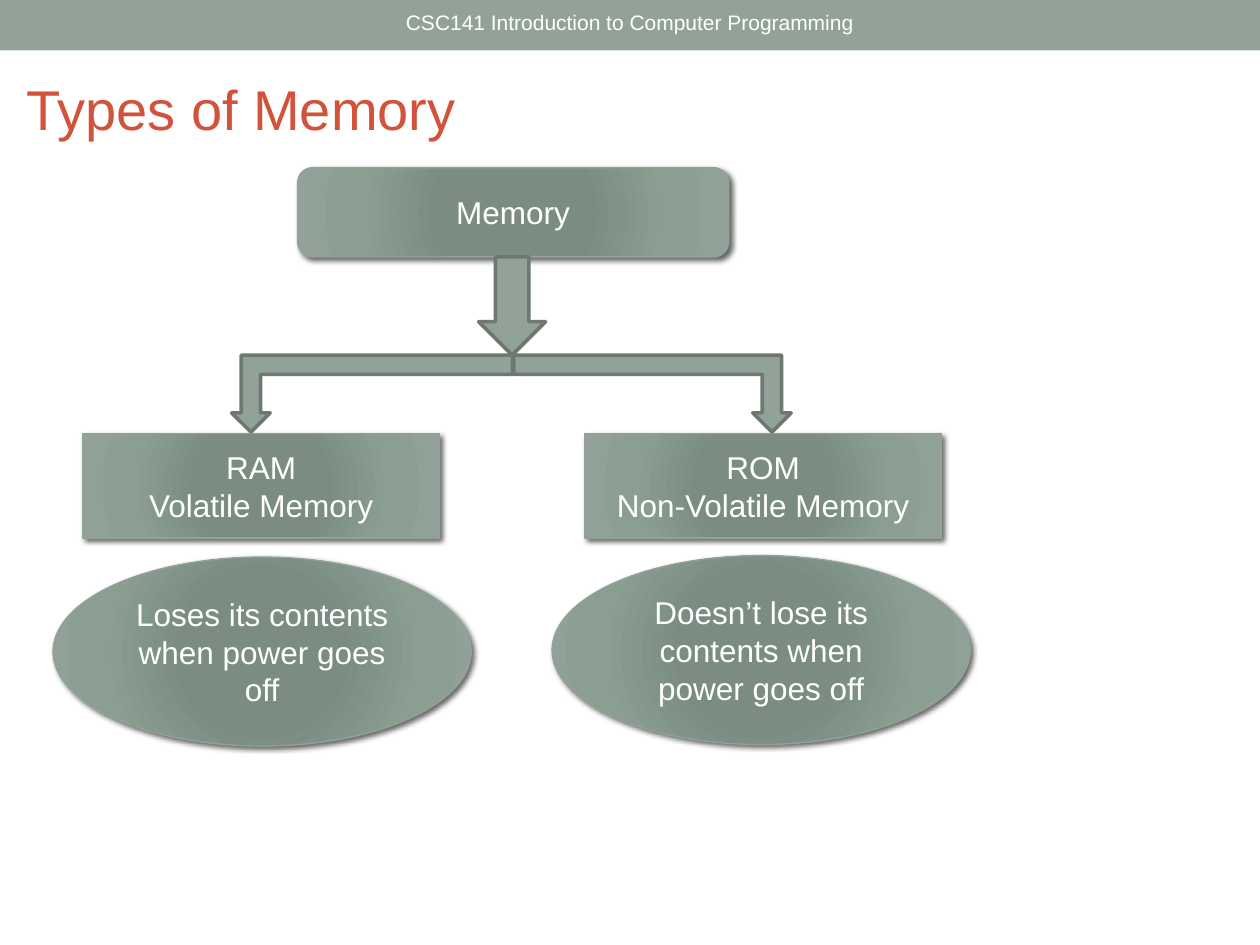
from lxml import etree
from pptx import Presentation
from pptx.dml.color import RGBColor
from pptx.enum.shapes import MSO_SHAPE
from pptx.enum.text import MSO_ANCHOR, PP_ALIGN
from pptx.oxml import parse_xml
from pptx.oxml.ns import nsdecls, qn
from pptx.util import Cm, Pt

RECT, ROUNDED, OVAL = MSO_SHAPE.RECTANGLE, MSO_SHAPE.ROUNDED_RECTANGLE, MSO_SHAPE.OVAL
DOWN, BENT = MSO_SHAPE.DOWN_ARROW, MSO_SHAPE.BENT_UP_ARROW
LEFT, CENTER = PP_ALIGN.LEFT, PP_ALIGN.CENTER
TOP, MIDDLE = MSO_ANCHOR.TOP, MSO_ANCHOR.MIDDLE

THEME = {
    "font": "Arial",
    "sage": "93A299", "outline": "6D7871", "title": "D2533C", "light": "FFFFFF",
    "glow": [(0, "7B8E82"), (34, "7B8D83"), (70, "8A9E92"), (100, "93A299")],
    "header_size": 12, "title_size": 32, "node_size": 18,
    "node_line": 0.75, "arrow_line": 2.08,
}

# Positions are left, top, width, height in centimetres.
HEADER = ("CSC141 Introduction to Computer Programming", (6.98, 0, 11.44, 0.91))
TITLE = ("Types of Memory", (0.28, 1.37, 9.63, 1.63))
NODES = [
    (RECT, (1.67, 8.74, 7.19, 2.11), ["RAM", "Volatile Memory"]),
    (RECT, (11.79, 8.74, 7.19, 2.11), ["ROM", "Non-Volatile Memory"]),
    (OVAL, (1.07, 11.23, 8.43, 3.81), ["Loses its contents when power goes off"]),
    (OVAL, (11.13, 11.2, 8.43, 3.81), ["Doesn’t lose its contents when power goes off"]),
    (ROUNDED, (6, 3.38, 8.69, 1.8), ["Memory"]),
]
# Each arrow: preset, position, rotation, mirrored
ARROWS = [
    (BENT, (4.67, 7.16, 5.66, 1.55), 180, False),
    (BENT, (10.36, 7.16, 5.59, 1.55), 180, True),
    (DOWN, (9.65, 5.18, 1.35, 1.98), 0, False),
]


def rgb(name):
    return RGBColor.from_string(THEME[name])


def write(frame, lines, size, color, align=CENTER, anchor=MIDDLE):
    frame.word_wrap = True
    frame.vertical_anchor = anchor
    for index, line in enumerate(lines):
        paragraph = frame.paragraphs[0] if index == 0 else frame.add_paragraph()
        paragraph.alignment = align
        run = paragraph.add_run()
        run.text = line
        run.font.name = THEME["font"]
        run.font.size = Pt(THEME[size])
        run.font.color.rgb = rgb(color)


def add_label(slide, label, *style):
    text, position = label
    box = slide.shapes.add_textbox(*map(Cm, position))
    write(box.text_frame, [text], *style)


def add_flat(slide, preset, position):
    shape = slide.shapes.add_shape(preset, *map(Cm, position))
    shape.shadow.inherit = False
    shape.fill.solid()
    shape.fill.fore_color.rgb = rgb("sage")
    shape.line.fill.background()
    return shape


def outline(shape, color, width):
    shape.line.color.rgb = rgb(color)
    shape.line.width = Pt(THEME[width])


def add_glow_and_shadow(shape):
    """Swap the solid fill for a radial gradient and add a soft drop shadow."""
    stops = "".join(
        f'<a:gs pos="{percent * 1000}"><a:srgbClr val="{color}"/></a:gs>'
        for percent, color in THEME["glow"])
    gradient = parse_xml(
        f'<a:gradFill {nsdecls("a")} rotWithShape="1"><a:gsLst>{stops}</a:gsLst>'
        '<a:path path="circle"><a:fillToRect l="100000" t="100000" r="100000" b="100000"/>'
        '</a:path></a:gradFill>')
    properties = shape.element.spPr
    properties.replace(properties.find(qn("a:solidFill")), gradient)
    shadow = etree.SubElement(
        properties.find(qn("a:effectLst")), qn("a:outerShdw"),
        blurRad=str(Pt(3)), dist=str(Pt(2)), dir="2700000", rotWithShape="0")
    color = etree.SubElement(shadow, qn("a:srgbClr"), val="000000")
    etree.SubElement(color, qn("a:alpha"), val="60000")


def main():
    deck = Presentation()
    deck.slide_width, deck.slide_height = Cm(25.4), Cm(19.05)
    slide = deck.slides.add_slide(deck.slide_layouts[6])

    add_flat(slide, RECT, (0, 0, 25.4, 1.02))
    add_label(slide, HEADER, "header_size", "light")

    for preset, position, lines in NODES:
        node = add_flat(slide, preset, position)
        outline(node, "sage", "node_line")
        add_glow_and_shadow(node)
        write(node.text_frame, lines, "node_size", "light")

    for preset, position, rotation, mirrored in ARROWS:
        arrow = add_flat(slide, preset, position)
        outline(arrow, "outline", "arrow_line")
        arrow.rotation = rotation
        if mirrored:
            arrow.element.spPr.find(qn("a:xfrm")).set("flipH", "1")

    add_label(slide, TITLE, "title_size", "title", LEFT, TOP)
    deck.save("out.pptx")


if __name__ == "__main__":
    main()
